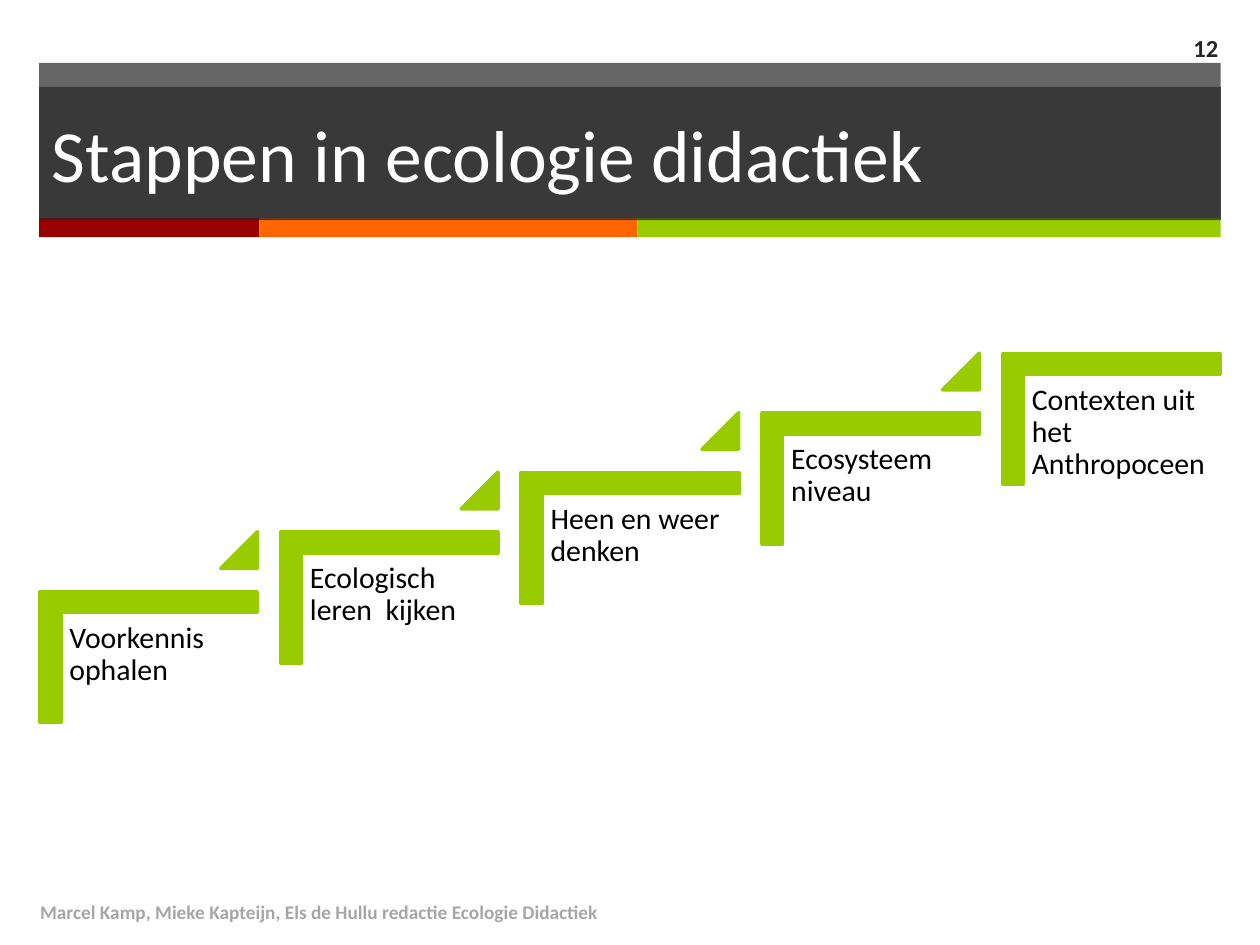
"""Build a slide with five ascending steps in ecology teaching."""
from dataclasses import dataclass

from lxml.etree import SubElement
from pptx import Presentation
from pptx.dml.color import RGBColor
from pptx.enum.shapes import MSO_SHAPE
from pptx.enum.text import MSO_ANCHOR, MSO_AUTO_SIZE, PP_ALIGN
from pptx.oxml.ns import qn
from pptx.util import Cm, Pt

COLORS = {
    "dark": "262626",
    "red": "990000",
    "orange": "FF6600",
    "green": "99CC00",
    "white": "FFFFFF",
    "black": "000000",
    "gray": "A6A6A6",
}
FONT = "Calibri"
STEPS = [
    "Voorkennis ophalen",
    "Ecologisch leren  kijken",
    "Heen en weer denken",
    "Ecosysteem niveau",
    "Contexten uit het Anthropoceen",
]
STEP_RIGHT, STEP_UP = 4.85, 1.2
EDGE = 0.79


@dataclass(frozen=True)
class Area:
    left: float
    top: float
    width: float
    height: float

    def raised(self, count: int) -> "Area":
        return Area(self.left + count * STEP_RIGHT, self.top - count * STEP_UP,
                    self.width, self.height)

    def lengths(self) -> tuple:
        return Cm(self.left), Cm(self.top), Cm(self.width), Cm(self.height)


@dataclass(frozen=True)
class Style:
    size: float
    color: str
    bold: bool = False
    align: PP_ALIGN = PP_ALIGN.LEFT
    anchor: MSO_ANCHOR = MSO_ANCHOR.MIDDLE


HEADER = Area(EDGE, 1.27, 23.82, 3.14)
TITLE = Area(EDGE, 1.75, 23.82, 2.69)
STRIPES = [("red", 4.44), ("orange", 7.62), ("green", 11.76)]
CORNER = Area(1.68, 11.05, 2.64, 4.39)
LABEL = Area(1.22, 12.37, 3.96, 3.48)
TRIANGLE = Area(4.45, 10.72, 0.74, 0.74)


def color(name: str) -> RGBColor:
    return RGBColor.from_string(COLORS[name])


def paint(shape, name: str, opacity: int = 100) -> None:
    shape.fill.solid()
    shape.fill.fore_color.rgb = color(name)
    if opacity < 100:
        tone = shape.element.spPr.find(qn("a:solidFill")).find(qn("a:srgbClr"))
        SubElement(tone, qn("a:alpha")).set("val", str(opacity * 1000))


def add_shape(page, kind: MSO_SHAPE, area: Area, fill: str, opacity: int = 100,
              outline: float = 0, adjustments: tuple = ()):
    shape = page.shapes.add_shape(kind, *area.lengths())
    shape.shadow.inherit = False
    paint(shape, fill, opacity)
    if outline:
        shape.line.color.rgb = color(fill)
        shape.line.width = Pt(outline)
    else:
        shape.line.fill.background()
    for index, value in enumerate(adjustments):
        shape.adjustments[index] = value
    return shape


def write(box, text: str, style: Style):
    frame = box.text_frame
    frame.text = text
    frame.word_wrap = True
    frame.auto_size = MSO_AUTO_SIZE.NONE
    frame.vertical_anchor = style.anchor
    para = frame.paragraphs[0]
    para.alignment = style.align
    for span in para.runs:
        span.font.name = FONT
        span.font.size = Pt(style.size)
        span.font.bold = style.bold
        span.font.color.rgb = color(style.color)
    return frame


def add_text(page, area: Area, text: str, style: Style):
    return write(page.shapes.add_textbox(*area.lengths()), text, style)


def add_header(page) -> None:
    add_shape(page, MSO_SHAPE.RECTANGLE, HEADER, "dark", opacity=70)
    left = EDGE
    for name, width in STRIPES:
        add_shape(page, MSO_SHAPE.RECTANGLE, Area(left, 4.4, width, 0.38), name)
        left += width
    title = page.shapes.title
    title.left, title.top, title.width, title.height = TITLE.lengths()
    paint(title, "dark", opacity=70)
    write(title, "Stappen in ecologie didactiek", Style(42, "white"))
    title.element.getparent().append(title.element)


def add_step(page, index: int, text: str) -> None:
    corner = add_shape(page, MSO_SHAPE.CORNER, CORNER.raised(index), "green",
                       outline=2, adjustments=(0.16, 0.16))
    corner.rotation = 90
    frame = add_text(page, LABEL.raised(index), text,
                     Style(17, "black", anchor=MSO_ANCHOR.TOP))
    frame.margin_left = frame.margin_right = Cm(0.18)
    frame.margin_top = frame.margin_bottom = Cm(0.18)
    frame.paragraphs[0].line_spacing = 0.9
    if index < len(STEPS) - 1:
        add_shape(page, MSO_SHAPE.ISOSCELES_TRIANGLE, TRIANGLE.raised(index), "green",
                  outline=2, adjustments=(1,))


def main() -> None:
    deck = Presentation()
    deck.slide_width, deck.slide_height = Cm(25.4), Cm(19.05)
    page = deck.slides.add_slide(deck.slide_layouts[5])
    add_header(page)
    for index, text in enumerate(STEPS):
        add_step(page, index, text)
    add_text(page, Area(0.56, 17.88, 17.02, 1.02),
             "Marcel Kamp, Mieke Kapteijn, Els de Hullu redactie Ecologie Didactiek",
             Style(11, "gray", bold=True))
    add_text(page, Area(23.06, 0.46, 1.75, 0.99), "12",
             Style(14, "dark", bold=True, align=PP_ALIGN.RIGHT))
    deck.save("out.pptx")


if __name__ == "__main__":
    main()
